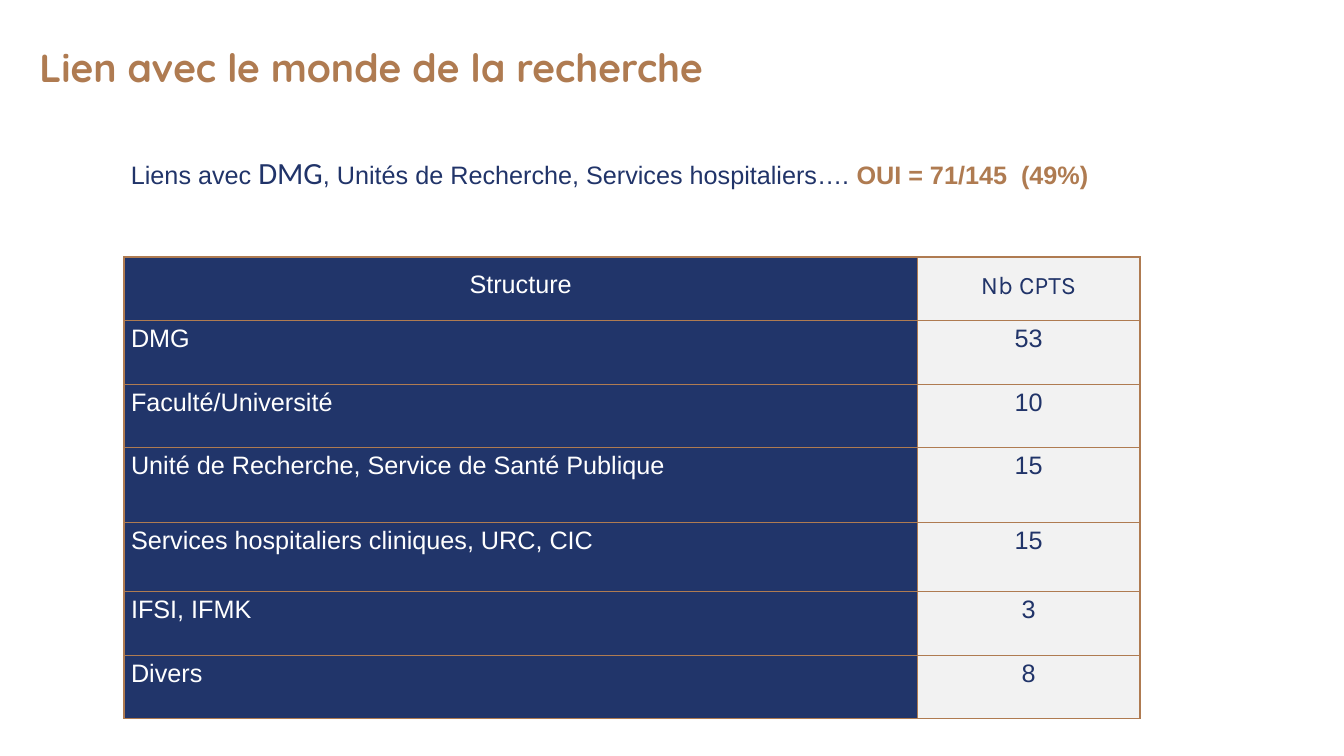
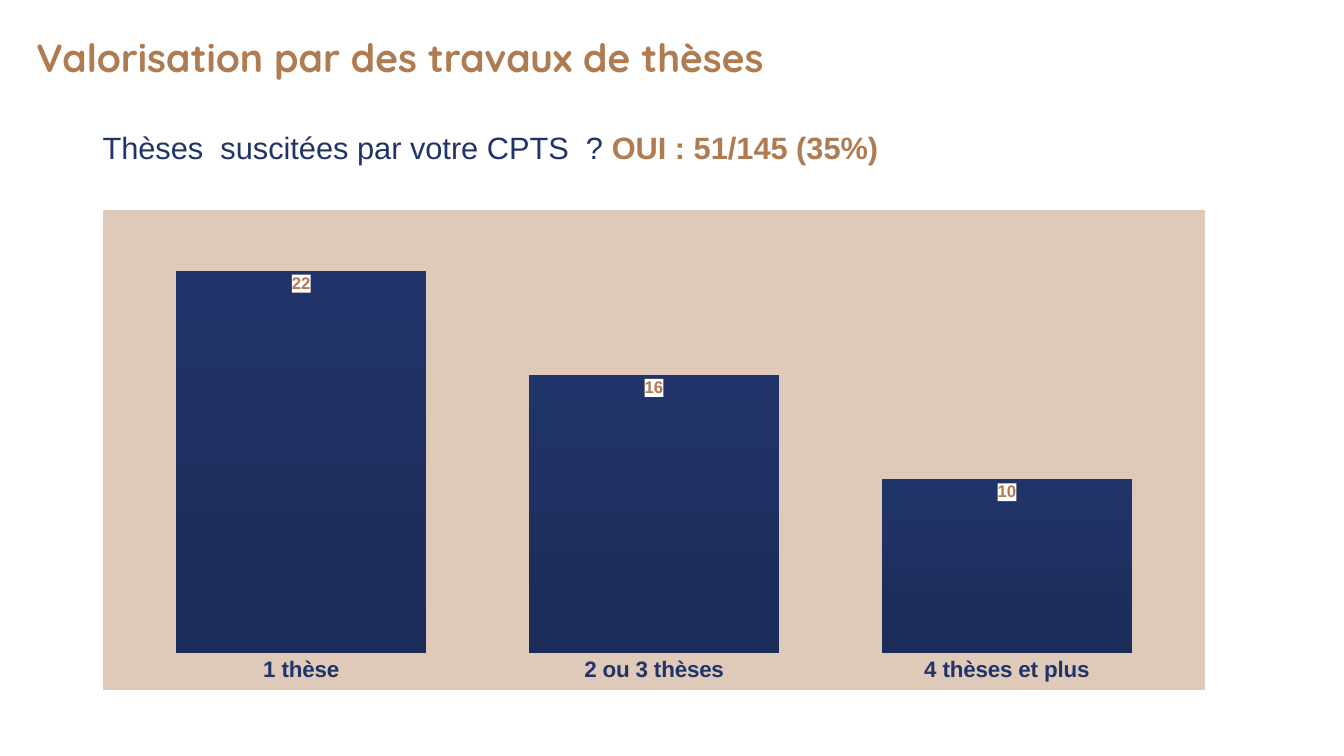
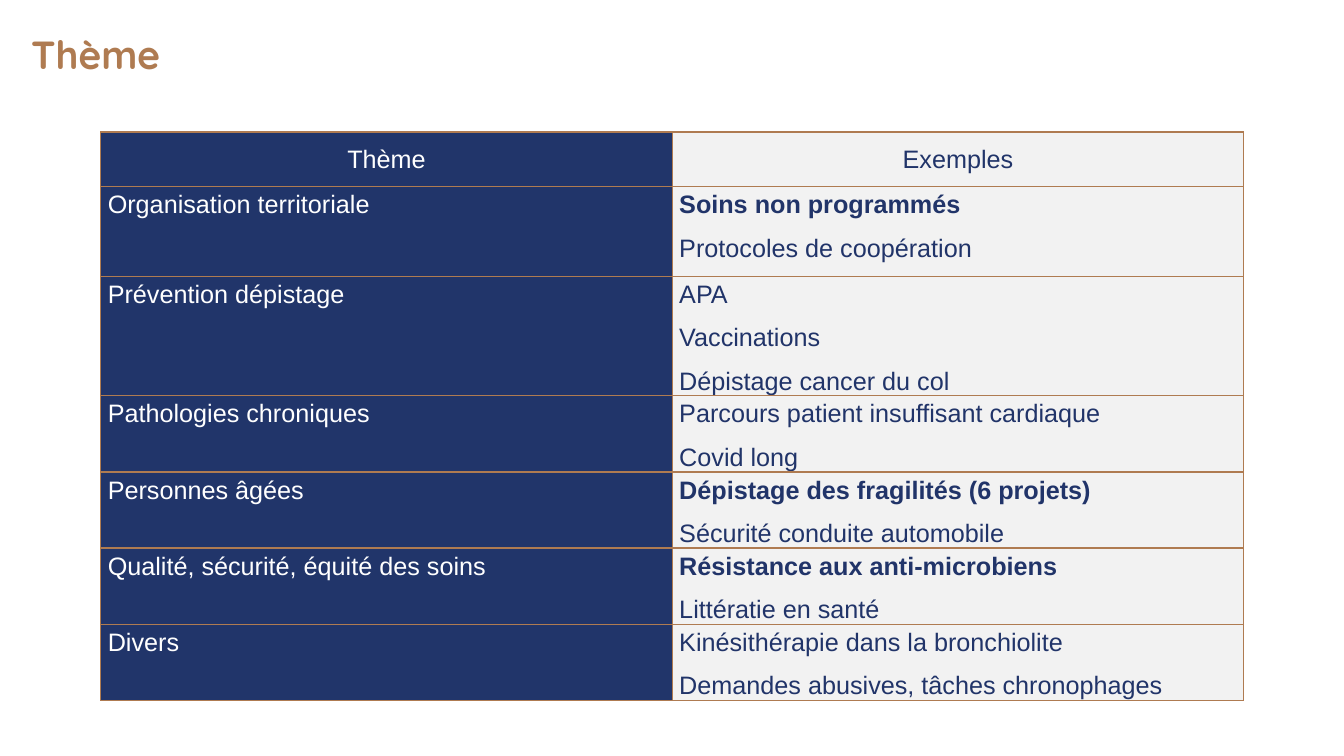
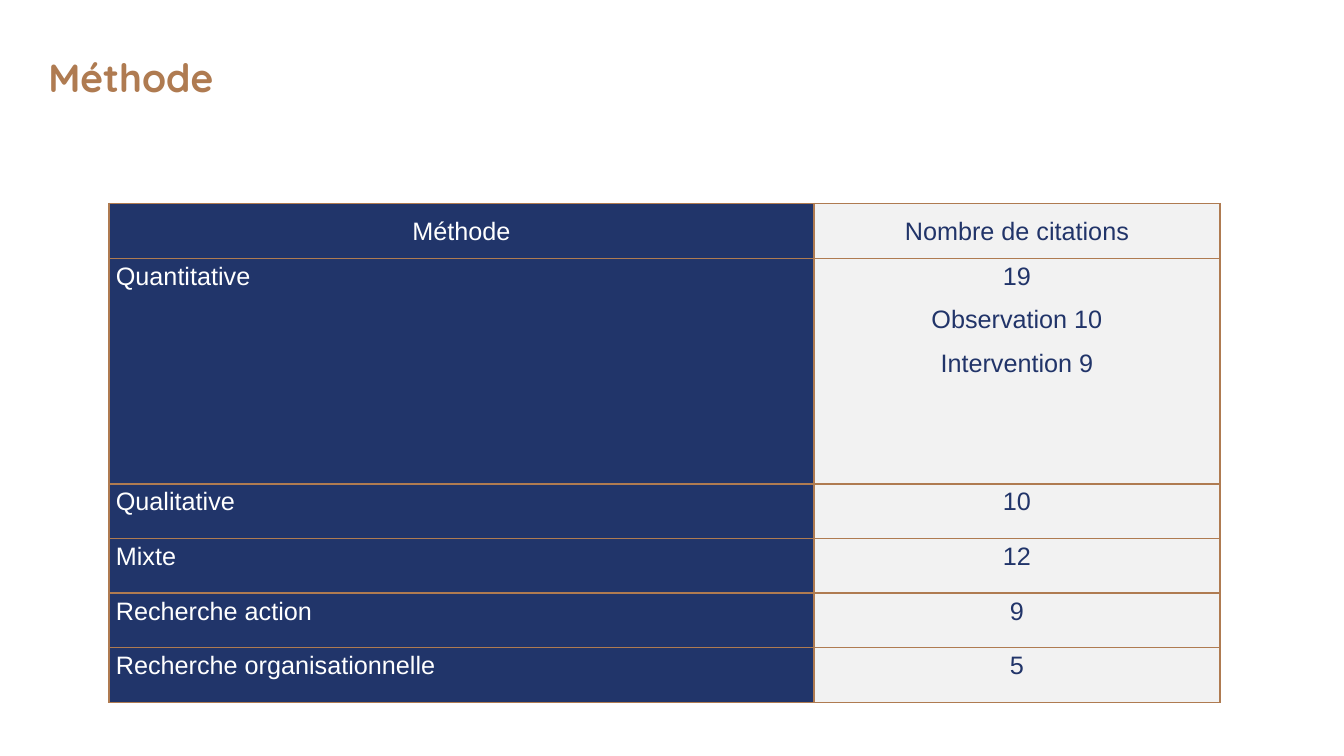
"""Build four slides on research links, theses, themes and methods."""
from lxml import etree
from pptx import Presentation
from pptx.chart.data import CategoryChartData
from pptx.dml.color import RGBColor
from pptx.enum import chart as ch, text as tx
from pptx.oxml import parse_xml
from pptx.oxml.ns import nsdecls, qn
from pptx.util import Pt

COPPER, INK, NAVY, DARK_NAVY = "AF7B51", "213469", "21356A", "1C2C58"
WHITE, PALE, SAND = "FFFFFF", "F2F2F2", "DFCAB9"
LEFT, CENTER = tx.PP_ALIGN.LEFT, tx.PP_ALIGN.CENTER
rgb = RGBColor.from_string


def write(paragraph, text, size=18, font="Arial", color=INK, bold=False,
          align=LEFT, spacing=None, after=None):
    """Add a formatted run and set the layout of its paragraph."""
    run = paragraph.add_run()
    run.text = text
    run.font.size, run.font.name, run.font.bold = Pt(size), font, bold
    run.font.color.rgb = rgb(color)
    paragraph.alignment = align
    if spacing:
        paragraph.line_spacing = spacing
    if after is not None:
        paragraph.space_after = Pt(after)


def fill_cell(cell, lines, fill, **layout):
    """Fill a bordered cell with (text, format) lines."""
    props = cell._tc.get_or_add_tcPr()
    for side in ("lnL", "lnR", "lnT", "lnB"):
        edge = etree.SubElement(props, qn(f"a:{side}"), w=str(Pt(1)))
        solid = etree.SubElement(edge, qn("a:solidFill"))
        etree.SubElement(solid, qn("a:srgbClr"), val=COPPER)
    cell.fill.solid()
    cell.fill.fore_color.rgb = rgb(fill)
    cell.margin_left = cell.margin_right = Pt(5)
    cell.margin_top = cell.margin_bottom = 0
    for i, (text, style) in enumerate(lines):
        frame = cell.text_frame
        paragraph = frame.add_paragraph() if i else frame.paragraphs[0]
        write(paragraph, text, **{**layout, **style})


BOLD, PLAIN = {"bold": True}, {}
pages = [
    {"title": "Lien avec le monde de la recherche", "at": (20.9, 23.8),
     "question": (86.4, 106.6, 725.8, [
         ("Liens avec ", {}),
         ("DMG", {"size": 22, "font": "Calibri"}),
         (", Unités de Recherche, Services hospitaliers…. ", {}),
         ("OUI = 71/145  (49%)", {"color": COPPER, "bold": True})]),
     "table": {
         "at": (88.6, 183.6), "columns": (566.6, 159.1),
         "heights": (45.4, 45.4, 45.4, 53.3, 49.7, 45.4, 45.4),
         "align": CENTER, "header_after": 8,
         "header": ("Structure", ("Nb CPTS", {"font": "Karla"})),
         "rows": [("DMG", [("53", PLAIN)]),
                  ("Faculté/Université", [("10", PLAIN)]),
                  ("Unité de Recherche, Service de Santé Publique", [("15", PLAIN)]),
                  ("Services hospitaliers cliniques, URC, CIC", [("15", PLAIN)]),
                  ("IFSI, IFMK", [("3", PLAIN)]),
                  ("Divers", [("8", PLAIN)])]}},
    {"title": "Valorisation par des travaux de thèses", "at": (18.7, 16.6),
     "question": (66.2, 88.6, 776.9, [
         ("Thèses  suscitées par votre CPTS  ? ", {"size": 22}),
         ("OUI : 51/145 (35%)", {"size": 22, "color": COPPER, "bold": True})]),
     "theses": {"1 thèse": 22, "2 ou 3 thèses": 16, "4 thèses et plus": 10}},
    {"title": "Thème", "at": (15.1, 14.4),
     "table": {
         "at": (72, 94.3), "columns": (408.2, 408.2),
         "heights": (38.9, 64.1, 83.5, 52.6, 52.6, 52.6, 52.6),
         "align": LEFT, "header_after": 6,
         "header": ("Thème", ("Exemples", PLAIN)),
         "rows": [("Organisation territoriale",
                   [("Soins non programmés", BOLD), ("Protocoles de coopération", PLAIN)]),
                  ("Prévention dépistage",
                   [("APA", PLAIN), ("Vaccinations", PLAIN),
                    ("Dépistage cancer du col", PLAIN)]),
                  ("Pathologies chroniques",
                   [("Parcours patient insuffisant cardiaque", PLAIN),
                    ("Covid long", PLAIN)]),
                  ("Personnes âgées",
                   [("Dépistage des fragilités (6 projets)", BOLD),
                    ("Sécurité conduite automobile", PLAIN)]),
                  ("Qualité, sécurité, équité des soins",
                   [("Résistance aux anti-microbiens", BOLD),
                    ("Littératie en santé", PLAIN)]),
                  ("Divers",
                   [("Kinésithérapie dans la bronchiolite", PLAIN),
                    ("Demandes abusives, tâches chronophages", PLAIN)])]}},
    {"title": "Méthode", "at": (27.4, 31),
     "table": {
         "at": (77.8, 145.4), "columns": (503.6, 290),
         "heights": (39, 161.3, 39, 39, 39, 39),
         "align": CENTER, "header_after": 8,
         "header": ("Méthode", ("Nombre de citations", PLAIN)),
         "rows": [("Quantitative",
                   [("19", PLAIN), ("Observation 10", PLAIN), ("Intervention 9", PLAIN)]),
                  ("Qualitative", [("10", PLAIN)]),
                  ("Mixte", [("12", PLAIN)]),
                  ("Recherche action", [("9", PLAIN)]),
                  ("Recherche organisationnelle", [("5", PLAIN)])]}},
]

deck = Presentation()
deck.slide_width, deck.slide_height = Pt(960), Pt(540)

for page in pages:
    slide = deck.slides.add_slide(deck.slide_layouts[5])
    title = slide.shapes.title
    title.left, title.top = map(Pt, page["at"])
    title.width, title.height = Pt(894.2), Pt(60.5)
    heading = title.text_frame
    heading.auto_size, heading.word_wrap = tx.MSO_AUTO_SIZE.NONE, True
    heading.vertical_anchor = tx.MSO_ANCHOR.TOP
    heading.margin_left = heading.margin_right = Pt(7.2)
    heading.margin_top = heading.margin_bottom = Pt(7.2)
    write(heading.paragraphs[0], page["title"], size=28, font="Quicksand",
          color=COPPER, bold=True)

    if "table" in page:
        plan = page["table"]
        rows, columns, heights = plan["rows"], plan["columns"], plan["heights"]
        table = slide.shapes.add_table(
            len(heights), 2, *map(Pt, plan["at"]), Pt(sum(columns)), Pt(sum(heights))).table
        table.first_row = table.horz_banding = False
        for column, width in zip(table.columns, columns):
            column.width = Pt(width)
        for row, height in zip(table.rows, heights):
            row.height = Pt(height)
        label, figure = plan["header"]
        header = {"align": CENTER, "spacing": 1.5, "after": plan["header_after"]}
        body = {"spacing": 1.15, "after": 8}
        fill_cell(table.cell(0, 0), [(label, PLAIN)], NAVY, color=WHITE, **header)
        fill_cell(table.cell(0, 1), [figure], PALE, **header)
        for i, (label, details) in enumerate(rows, 1):
            fill_cell(table.cell(i, 0), [(label, PLAIN)], NAVY, color=WHITE, **body)
            fill_cell(table.cell(i, 1), details, PALE, align=plan["align"], **body)

    if "theses" in page:
        data = CategoryChartData()
        data.categories = list(page["theses"])
        data.add_series("Series 1", list(page["theses"].values()))
        chart = slide.shapes.add_chart(
            ch.XL_CHART_TYPE.COLUMN_CLUSTERED, Pt(73), Pt(149), Pt(788.4), Pt(344.9), data).chart
        chart.has_legend = chart.has_title = False
        chart.font.size, chart.font.name = Pt(10), "Arial"
        chart.font.color.rgb = rgb(WHITE)
        chart.element.find(qn("c:chart")).addnext(parse_xml(
            f'<c:spPr {nsdecls("c", "a")}><a:solidFill><a:srgbClr val="{SAND}"/></a:solidFill>'
            f'<a:ln w="{Pt(0.75)}"><a:solidFill><a:srgbClr val="{WHITE}"/></a:solidFill></a:ln>'
            '</c:spPr>'))
        values = chart.value_axis
        values.visible = values.has_major_gridlines = False
        values.minimum_scale, values.maximum_scale = 0, 25
        names = chart.category_axis
        names.major_tick_mark = names.minor_tick_mark = ch.XL_TICK_MARK.NONE
        names.format.line.fill.background()
        plot = chart.plots[0]
        plot.gap_width, plot.vary_by_categories = 41, False
        bars = plot.series[0]
        bars.format.fill.gradient()
        bars.format.fill.gradient_angle = 270
        for stop, color in zip(bars.format.fill.gradient_stops, (INK, DARK_NAVY)):
            stop.color.rgb = rgb(color)
        counts = bars.data_labels
        counts.show_value, counts.position = True, ch.XL_LABEL_POSITION.INSIDE_END
        for font, size, color in ((names.tick_labels.font, 16, INK), (counts.font, 12, COPPER)):
            font.size, font.name, font.bold = Pt(size), "Arial", True
            font.color.rgb = rgb(color)
        counts._element.find(qn("c:txPr")).addprevious(parse_xml(
            f'<c:spPr {nsdecls("c", "a")}><a:solidFill><a:srgbClr val="{WHITE}">'
            '<a:alpha val="90000"/></a:srgbClr></a:solidFill></c:spPr>'))

    if "question" in page:
        left, top, width, parts = page["question"]
        question = slide.shapes.add_textbox(Pt(left), Pt(top), Pt(width), Pt(33.8)).text_frame
        question.word_wrap = True
        question.auto_size = tx.MSO_AUTO_SIZE.SHAPE_TO_FIT_TEXT
        for text, style in parts:
            write(question.paragraphs[0], text, **style)

deck.save("out.pptx")
